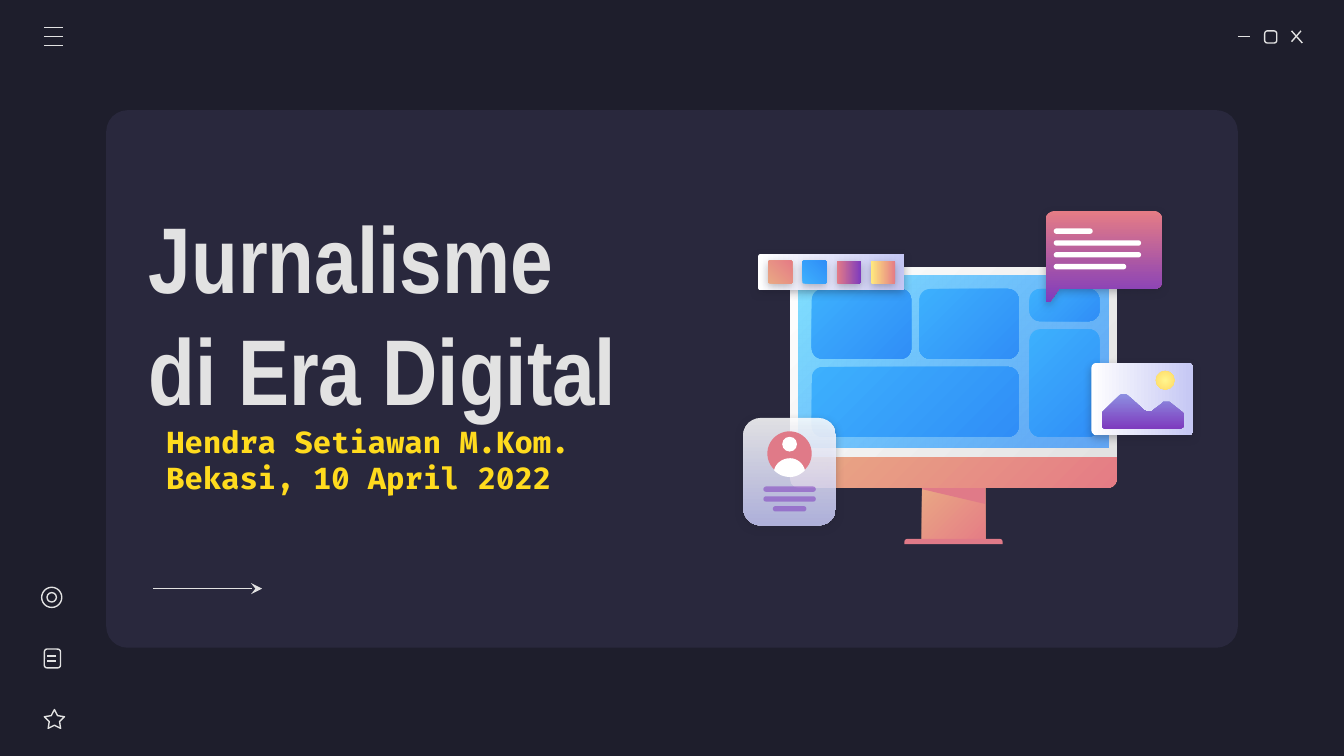
"""Build the title slide "Jurnalisme di Era Digital" with its desktop illustration."""
from pptx import Presentation
from pptx.dml.color import RGBColor
from pptx.enum.shapes import MSO_CONNECTOR, MSO_SHAPE as Preset
from pptx.enum.text import MSO_ANCHOR
from pptx.oxml import parse_xml
from pptx.oxml.ns import nsdecls, qn
from pptx.util import Inches, Pt

NIGHT = RGBColor(0x1E, 0x1E, 0x2C)
PANEL = RGBColor(0x29, 0x28, 0x3D)
MIST = RGBColor(0xE2, 0xE2, 0xE2)
YELLOW = RGBColor(0xFF, 0xDB, 0x1E)
WHITE = RGBColor(0xFF, 0xFF, 0xFF)
ROSE = RGBColor(0xE0, 0x7A, 0x88)
CORAL = RGBColor(0xE5, 0x7C, 0x85)
PEACH = RGBColor(0xE9, 0xA9, 0x84)
PURPLE = RGBColor(0x7E, 0x3B, 0xBE)
LAVENDER = RGBColor(0xC5, 0xC7, 0xF4)
PERIWINKLE = RGBColor(0x8D, 0x90, 0xE1)
SKY = RGBColor(0x3D, 0xB0, 0xFD)
BLUE = RGBColor(0x30, 0x8E, 0xF7)
AQUA = RGBColor(0x80, 0xDF, 0xFF)
AZURE = RGBColor(0x31, 0x8F, 0xFA)
LEMON = RGBColor(0xFF, 0xF6, 0x8E)
GOLD = RGBColor(0xFF, 0xD9, 0x66)
SUNNY = RGBColor(0xFF, 0xEA, 0x7D)

SLIDE_WIDTH = Inches(10)
SLIDE_HEIGHT = SLIDE_WIDTH * 9 // 16
TEXTS = [
    ("Hendra Setiawan M.Kom.\nBekasi, 10 April 2022", (1.14, 3.19, 3.24, 0.46), "Fira Code", 16, YELLOW),
    ("Jurnalisme\vdi Era Digital", (1.01, 1.44, 4.47, 1.76), "Arial Narrow", 50, MIST),
]
WARM = (PEACH, CORAL, 45)
TILE = (SKY, BLUE, 45)
TILES = [(6.04, 2.15, 0.74, 0.52), (6.04, 2.73, 1.54, 0.52), (6.84, 2.15, 0.74, 0.52),
         (7.66, 2.15, 0.52, 0.24), (7.66, 2.45, 0.52, 0.8)]
MESSAGE_WIDTHS = [0.29, 0.65, 0.65, 0.54]
PROFILE_WIDTHS = [0.39, 0.39, 0.25]
SWATCHES = [(PEACH, CORAL, 315), (SKY, BLUE, 315), (CORAL, PURPLE, 0), (SUNNY, CORAL, 0)]
BUBBLE = [
    (7.85, 1.57), (7.81, 1.57, 7.78, 1.6, 7.78, 1.64), (7.78, 2.24),
    (7.78, 2.25, 7.79, 2.25, 7.8, 2.25), (7.81, 2.25), (7.88, 2.15), (8.59, 2.15),
    (8.62, 2.15, 8.65, 2.12, 8.65, 2.09), (8.65, 1.64), (8.65, 1.6, 8.62, 1.57, 8.59, 1.57),
]
SHOULDERS = [
    (5.88, 3.41), (5.82, 3.41, 5.77, 3.45, 5.76, 3.5), (5.79, 3.53, 5.83, 3.55, 5.88, 3.55),
    (5.92, 3.55, 5.96, 3.53, 5.99, 3.5), (5.98, 3.45, 5.93, 3.41, 5.88, 3.41),
]
HILLS = [
    (8.36, 2.93), (8.35, 2.93, 8.34, 2.93, 8.33, 2.94), (8.21, 3.06),
    (8.2, 3.07, 8.2, 3.07, 8.2, 3.08), (8.2, 3.16), (8.2, 3.18, 8.21, 3.19, 8.23, 3.19),
    (8.77, 3.19), (8.79, 3.19, 8.81, 3.18, 8.81, 3.16), (8.81, 3.09),
    (8.81, 3.08, 8.8, 3.07, 8.8, 3.07), (8.7, 2.99), (8.69, 2.99, 8.68, 2.99, 8.67, 2.99),
    (8.66, 2.99, 8.65, 2.99, 8.65, 3), (8.57, 3.06), (8.56, 3.06, 8.55, 3.06, 8.54, 3.06),
    (8.53, 3.06, 8.52, 3.06, 8.51, 3.05), (8.39, 2.94), (8.38, 2.93, 8.37, 2.93, 8.36, 2.93),
]


def gradient(start, end, angle, alpha=(100, 100)):
    """Return a gradient fill; an angle of None makes it radial."""
    stops = "".join(
        f'<a:gs pos="{pos}"><a:srgbClr val="{color}"><a:alpha val="{opacity * 1000}"/></a:srgbClr></a:gs>'
        for pos, color, opacity in zip((0, 100000), (start, end), alpha))
    way = ('<a:path path="circle"><a:fillToRect l="50000" t="50000" r="50000" b="50000"/></a:path>'
           if angle is None else f'<a:lin ang="{angle * 60000}" scaled="0"/>')
    return parse_xml(f'<a:gradFill {nsdecls("a")} rotWithShape="1"><a:gsLst>{stops}</a:gsLst>{way}</a:gradFill>')


def paint(part, fill=None, shadow=False, alpha=None):
    """Fill a part, or outline it when it has no fill."""
    if fill is None:
        part.fill.background()
        part.line.color.rgb = MIST
        part.line.width = Pt(0.75)
    else:
        part.fill.solid()
        part.line.fill.background()
        solid = part._element.spPr.find(qn("a:solidFill"))
        if isinstance(fill, RGBColor):
            part.fill.fore_color.rgb = fill
            if alpha:
                solid[0].append(parse_xml(f'<a:alpha {nsdecls("a")} val="{alpha * 1000}"/>'))
        else:
            solid.getparent().replace(solid, gradient(*fill))
    part.shadow.inherit = False
    if shadow:
        part._element.spPr.find(qn("a:effectLst")).append(parse_xml(
            f'<a:outerShdw {nsdecls("a")} blurRad="{Pt(4.5)}" dist="{Pt(1.5)}" dir="5400000" algn="ctr" '
            f'rotWithShape="0"><a:srgbClr val="{NIGHT}"><a:alpha val="30000"/></a:srgbClr></a:outerShdw>'))


def add_preset(canvas, preset, box, fill=None, adjust=(), **look):
    """Add a preset shape at a box given in inches."""
    part = canvas.add_shape(preset, *map(Inches, box))
    for index, value in enumerate(adjust):
        part.adjustments[index] = value
    paint(part, fill, **look)


def add_rounded(canvas, box, fill=None, radius=0.02, **look):
    """Add a rounded rectangle with its corner radius in inches."""
    add_preset(canvas, Preset.ROUNDED_RECTANGLE, box, fill, [radius / min(box[2:])], **look)


def add_outline(canvas, outline, fill, **look):
    """Add a closed outline of points and cubic curves."""
    points = [outline[0]]
    for step in outline[1:]:
        if len(step) == 2:
            points.append(step)
            continue
        corners = list(zip((points[-1] + step)[::2], (points[-1] + step)[1::2]))
        for t in (n / 8 for n in range(1, 9)):
            weights = ((1 - t) ** 3, 3 * t * (1 - t) ** 2, 3 * t * t * (1 - t), t ** 3)
            points.append(tuple(sum(w * c[axis] for w, c in zip(weights, corners)) for axis in (0, 1)))
    points = [(Inches(x), Inches(y)) for x, y in points]
    builder = canvas.build_freeform(*points[0])
    builder.add_line_segments(points[1:], close=True)
    paint(builder.convert_to_shape(), fill, **look)


def add_line(canvas, x1, y1, x2, y2, arrow=False):
    """Add a thin line, optionally with an arrowhead at its end."""
    line = canvas.add_connector(MSO_CONNECTOR.STRAIGHT, *map(Inches, (x1, y1, x2, y2)))
    line.line.color.rgb = MIST
    line.line.width = Pt(0.75)
    if arrow:
        line.line._get_or_add_ln().append(parse_xml(f'<a:tailEnd {nsdecls("a")} type="stealth"/>'))
    line._element.spPr.append(parse_xml(f'<a:effectLst {nsdecls("a")}/>'))


def add_text(canvas, words, box, font, size, color):
    """Add a bold text box anchored in the middle."""
    frame = canvas.add_textbox(*map(Inches, box)).text_frame
    frame.word_wrap = True
    frame.vertical_anchor = MSO_ANCHOR.MIDDLE
    frame.margin_left = frame.margin_right = frame.margin_top = frame.margin_bottom = Inches(0.1)
    frame.text = words
    for paragraph in frame.paragraphs:
        for run in paragraph.runs:
            run.font.name, run.font.size, run.font.bold = font, Pt(size), True
            run.font.color.rgb = color


def main():
    """Assemble and save the slide."""
    deck = Presentation()
    deck.slide_width, deck.slide_height = SLIDE_WIDTH, SLIDE_HEIGHT
    slide = deck.slides.add_slide(deck.slide_layouts[6])
    slide.background.fill.solid()
    slide.background.fill.fore_color.rgb = NIGHT
    shapes = slide.shapes
    add_rounded(shapes, (0.79, 0.82, 8.42, 4), PANEL, 0.16)

    window = shapes.add_group_shape().shapes
    add_line(window, 9.21, 0.27, 9.3, 0.27)
    add_rounded(window, (9.41, 0.23, 0.09, 0.09))
    add_line(window, 9.61, 0.23, 9.69, 0.32)
    add_line(window, 9.68, 0.23, 9.61, 0.31)

    for text in TEXTS:
        add_text(shapes, *text)

    monitor = shapes.add_group_shape().shapes
    add_preset(monitor, Preset.RECTANGLE, (6.86, 3.61, 0.47, 0.43), WARM)
    add_preset(monitor, Preset.ROUND_2_SAME_RECTANGLE, (6.73, 4.01, 0.73, 0.04), ROSE, [0.5, 0])
    add_outline(monitor, [(6.86, 3.61), (6.86, 3.64), (7.33, 3.75), (7.33, 3.61)], ROSE)
    add_preset(monitor, Preset.ROUND_2_SAME_RECTANGLE, (5.88, 3.39, 2.43, 0.24), WARM, [0, 0.27])
    add_preset(monitor, Preset.ROUND_2_SAME_RECTANGLE, (5.88, 1.99, 2.43, 1.41), (WHITE, MIST, 45), [0.04, 0])
    add_preset(monitor, Preset.RECTANGLE, (5.94, 2.05, 2.31, 1.28), (AQUA, AZURE, 45, (100, 72)))
    for tile in TILES:
        add_rounded(monitor, tile, TILE, 0.08)

    message = shapes.add_group_shape().shapes
    add_outline(message, BUBBLE, (CORAL, PURPLE, 90), shadow=True)
    for row, width in enumerate(MESSAGE_WIDTHS):
        add_rounded(message, (7.84, 1.7 + row * 0.088, width, 0.04), WHITE)

    menu = shapes.add_group_shape().shapes
    for row in range(3):
        y = 0.205 + row * 0.067
        add_line(menu, 0.33, y, 0.47, y)

    profile = shapes.add_group_shape().shapes
    add_rounded(profile, (5.53, 3.11, 0.69, 0.8), (WHITE, LAVENDER, 90, (86, 86)), 0.13, shadow=True)
    add_preset(profile, Preset.OVAL, (5.71, 3.21, 0.33, 0.33), ROSE)
    add_preset(profile, Preset.OVAL, (5.82, 3.25, 0.11, 0.11), WHITE)
    add_outline(profile, SHOULDERS, WHITE)
    for row, width in enumerate(PROFILE_WIDTHS):
        add_rounded(profile, (5.875 - width / 2, 3.62 + row * 0.073, width, 0.04), PURPLE, alpha=54)

    photo = shapes.add_group_shape().shapes
    add_rounded(photo, (8.12, 2.7, 0.76, 0.54), (WHITE, LAVENDER, 0), 0.04, shadow=True)
    add_outline(photo, HILLS, (PERIWINKLE, PURPLE, 90))
    add_preset(photo, Preset.OVAL, (8.6, 2.76, 0.14, 0.14), (LEMON, GOLD, None))

    palette = shapes.add_group_shape().shapes
    add_rounded(palette, (5.64, 1.89, 1.09, 0.27), (WHITE, LAVENDER, 0), shadow=True)
    for column, swatch in enumerate(SWATCHES):
        add_rounded(palette, (5.715 + column * 0.255, 1.94, 0.18, 0.17), swatch, 0.01, shadow=True)

    sidebar = shapes.add_group_shape().shapes
    add_preset(sidebar, Preset.STAR_5_POINT, (0.33, 5.28, 0.15, 0.14), adjust=[0.254, 1.051, 1.106])
    add_rounded(sidebar, (0.33, 4.83, 0.12, 0.14))
    for y in (4.88, 4.92):
        add_line(sidebar, 0.35, y, 0.42, y)
    add_preset(sidebar, Preset.OVAL, (0.31, 4.37, 0.15, 0.15))
    add_preset(sidebar, Preset.OVAL, (0.35, 4.41, 0.07, 0.07))
    add_line(shapes, 1.14, 4.38, 1.95, 4.38, arrow=True)
    deck.save("out.pptx")


if __name__ == "__main__":
    main()
